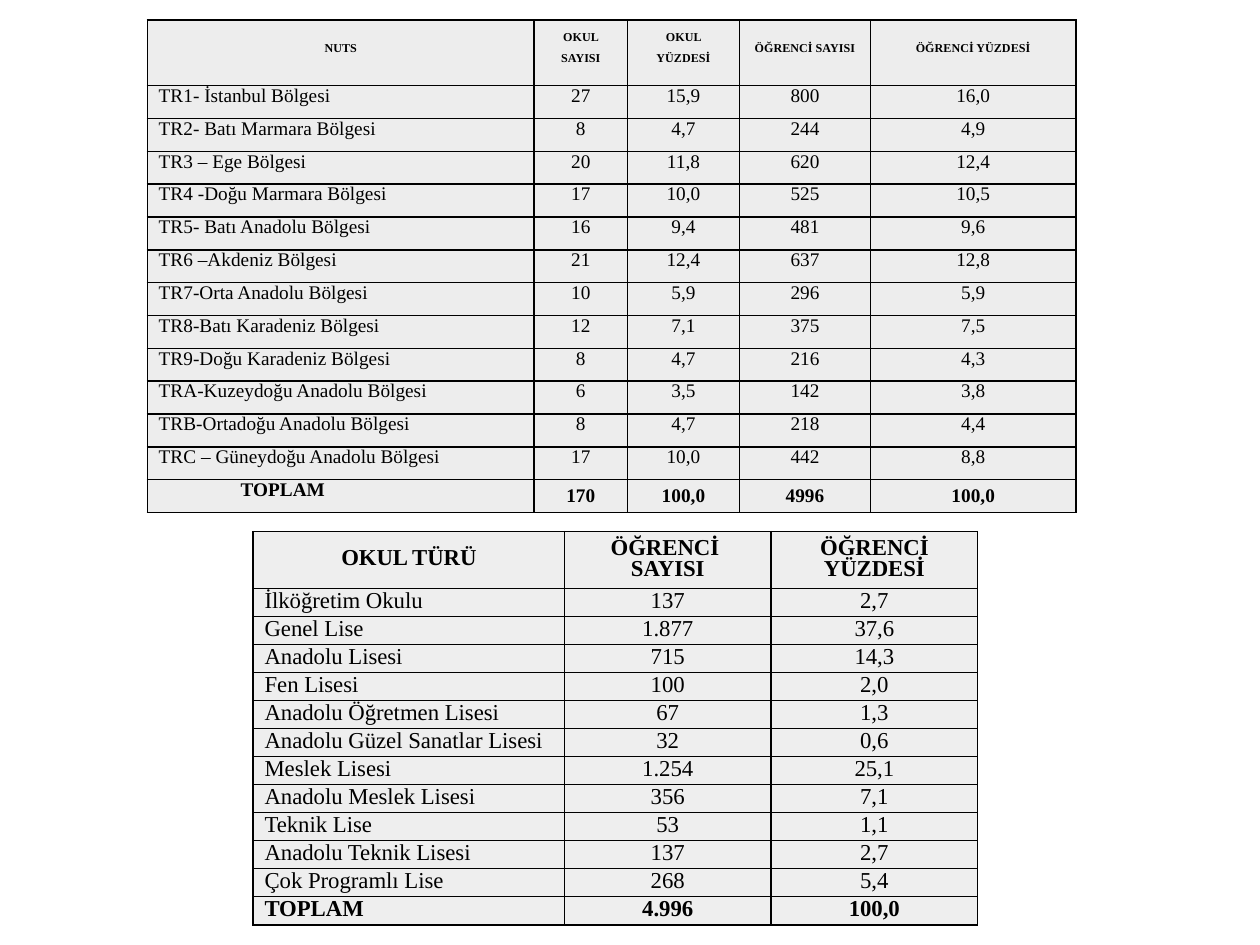
from dataclasses import dataclass

from lxml.etree import SubElement
from pptx import Presentation
from pptx.dml.color import RGBColor
from pptx.enum.text import MSO_ANCHOR, PP_ALIGN
from pptx.oxml.ns import qn
from pptx.util import Inches, Pt


@dataclass(frozen=True)
class Theme:
    font: str = "Times New Roman"
    ink: str = "000000"
    region_fill: str = "EDEDED"
    school_fill: str = "EEEEEE"
    region_header: int = 12
    region_body: int = 11
    school_text: int = 13
    leading: int = 12
    border: int = 1


THEME = Theme()

REGION_HEADER = ["NUTS", "OKUL SAYISI", "OKUL YÜZDESİ", "ÖĞRENCİ SAYISI", "ÖĞRENCİ YÜZDESİ"]
REGIONS = [
    ["TR1- İstanbul Bölgesi", "27", "15,9", "800", "16,0"],
    ["TR2- Batı Marmara Bölgesi", "8", "4,7", "244", "4,9"],
    ["TR3 – Ege Bölgesi", "20", "11,8", "620", "12,4"],
    ["TR4 -Doğu Marmara Bölgesi", "17", "10,0", "525", "10,5"],
    ["TR5- Batı Anadolu Bölgesi", "16", "9,4", "481", "9,6"],
    ["TR6 –Akdeniz Bölgesi", "21", "12,4", "637", "12,8"],
    ["TR7-Orta Anadolu Bölgesi", "10", "5,9", "296", "5,9"],
    ["TR8-Batı Karadeniz Bölgesi", "12", "7,1", "375", "7,5"],
    ["TR9-Doğu Karadeniz Bölgesi", "8", "4,7", "216", "4,3"],
    ["TRA-Kuzeydoğu Anadolu Bölgesi", "6", "3,5", "142", "3,8"],
    ["TRB-Ortadoğu Anadolu Bölgesi", "8", "4,7", "218", "4,4"],
    ["TRC – Güneydoğu Anadolu Bölgesi", "17", "10,0", "442", "8,8"],
]
REGION_TOTAL = ["TOPLAM", "170", "100,0", "4996", "100,0"]

SCHOOL_HEADER = ["OKUL TÜRÜ", "ÖĞRENCİ \nSAYISI", "ÖĞRENCİ YÜZDESİ"]
SCHOOLS = [
    ["İlköğretim Okulu", "137", "2,7"],
    ["Genel Lise", "1.877", "37,6"],
    ["Anadolu Lisesi", "715", "14,3"],
    ["Fen Lisesi", "100", "2,0"],
    ["Anadolu Öğretmen Lisesi", "67", "1,3"],
    ["Anadolu Güzel Sanatlar Lisesi", "32", "0,6"],
    ["Meslek Lisesi", "1.254", "25,1"],
    ["Anadolu Meslek Lisesi", "356", "7,1"],
    ["Teknik Lise", "53", "1,1"],
    ["Anadolu Teknik Lisesi", "137", "2,7"],
    ["Çok Programlı Lise", "268", "5,4"],
]
SCHOOL_TOTAL = ["TOPLAM", "4.996", "100,0"]


def write_text(cell, text, size, bold=False, align=PP_ALIGN.CENTER,
               anchor=MSO_ANCHOR.MIDDLE, raised=0, before=0, indent=0):
    """Write one paragraph for each line of text; raised is a percentage."""
    cell.vertical_anchor = anchor
    frame = cell.text_frame
    for index, line in enumerate(text.split("\n")):
        para = frame.add_paragraph() if index else frame.paragraphs[0]
        para.alignment = align
        para.line_spacing = Pt(THEME.leading)
        para.space_before = Pt(before)
        if indent:
            para._p.get_or_add_pPr().set("marL", str(Inches(indent)))
        span = para.add_run()
        span.text = line
        span.font.name = THEME.font
        span.font.size = Pt(size)
        span.font.bold = bold
        span.font.color.rgb = RGBColor.from_string(THEME.ink)
        if raised:
            span._r.get_or_add_rPr().set("baseline", str(raised * 1000))


def style_cell(cell, fill):
    cell.margin_left = cell.margin_right = Inches(0.09)
    cell.margin_top = cell.margin_bottom = 0
    properties = cell._tc.get_or_add_tcPr()
    # Borders come before the fill in the cell properties
    for side in ("a:lnL", "a:lnR", "a:lnT", "a:lnB"):
        line = SubElement(properties, qn(side), w=str(Pt(THEME.border)))
        paint = SubElement(line, qn("a:solidFill"))
        SubElement(paint, qn("a:srgbClr"), val=THEME.ink)
    cell.fill.solid()
    cell.fill.fore_color.rgb = RGBColor.from_string(fill)


def add_grid(page, box, widths, header_height, row_count, fill):
    """Add an empty bordered table whose body rows share the height left."""
    left, top, width, height = box
    table = page.shapes.add_table(row_count, len(widths), Inches(left), Inches(top),
                                  Inches(width), Inches(height)).table
    table.first_row = table.horz_banding = False
    for column, share in zip(table.columns, widths):
        column.width = Inches(width * share / sum(widths))
    body_height = (height - header_height) / (row_count - 1)
    for index, row in enumerate(table.rows):
        row.height = Inches(body_height if index else header_height)
    for cell in table.iter_cells():
        style_cell(cell, fill)
    return table


def fill_row(table, row, texts, first=None, **style):
    """Write a row; first holds the formats that only its label has."""
    for column, text in enumerate(texts):
        extra = first if first and column == 0 else {}
        write_text(table.cell(row, column), text, **{**style, **extra})


def add_region_table(page, box):
    table = add_grid(page, box, [3.07, 0.74, 0.89, 1.04, 1.63], 0.52,
                     len(REGIONS) + 2, THEME.region_fill)
    fill_row(table, 0, REGION_HEADER, size=THEME.region_header, bold=True, raised=30)
    for row, texts in enumerate(REGIONS, start=1):
        fill_row(table, row, texts, first={"align": PP_ALIGN.LEFT},
                 size=THEME.region_body, anchor=MSO_ANCHOR.TOP)
    label = {"align": PP_ALIGN.JUSTIFY, "anchor": MSO_ANCHOR.TOP, "indent": 0.65}
    fill_row(table, len(REGIONS) + 1, REGION_TOTAL, first=label,
             size=THEME.region_body, bold=True, before=6)


def add_school_table(page, box):
    table = add_grid(page, box, [2.47, 1.64, 1.64], 0.45,
                     len(SCHOOLS) + 2, THEME.school_fill)
    fill_row(table, 0, SCHOOL_HEADER, size=THEME.school_text, bold=True)
    for row, texts in enumerate(SCHOOLS + [SCHOOL_TOTAL], start=1):
        fill_row(table, row, texts, first={"align": PP_ALIGN.JUSTIFY},
                 size=THEME.school_text, bold=texts is SCHOOL_TOTAL)


def main():
    deck = Presentation()
    deck.slide_width, deck.slide_height = Inches(10), Inches(7.5)
    page = deck.slides.add_slide(deck.slide_layouts[6])
    # Schools and students by region
    add_region_table(page, (1.17, 0.16, 7.37, 3.91))
    # Students by school type
    add_school_table(page, (2.01, 4.22, 5.75, 3.12))
    deck.save("out.pptx")


if __name__ == "__main__":
    main()
